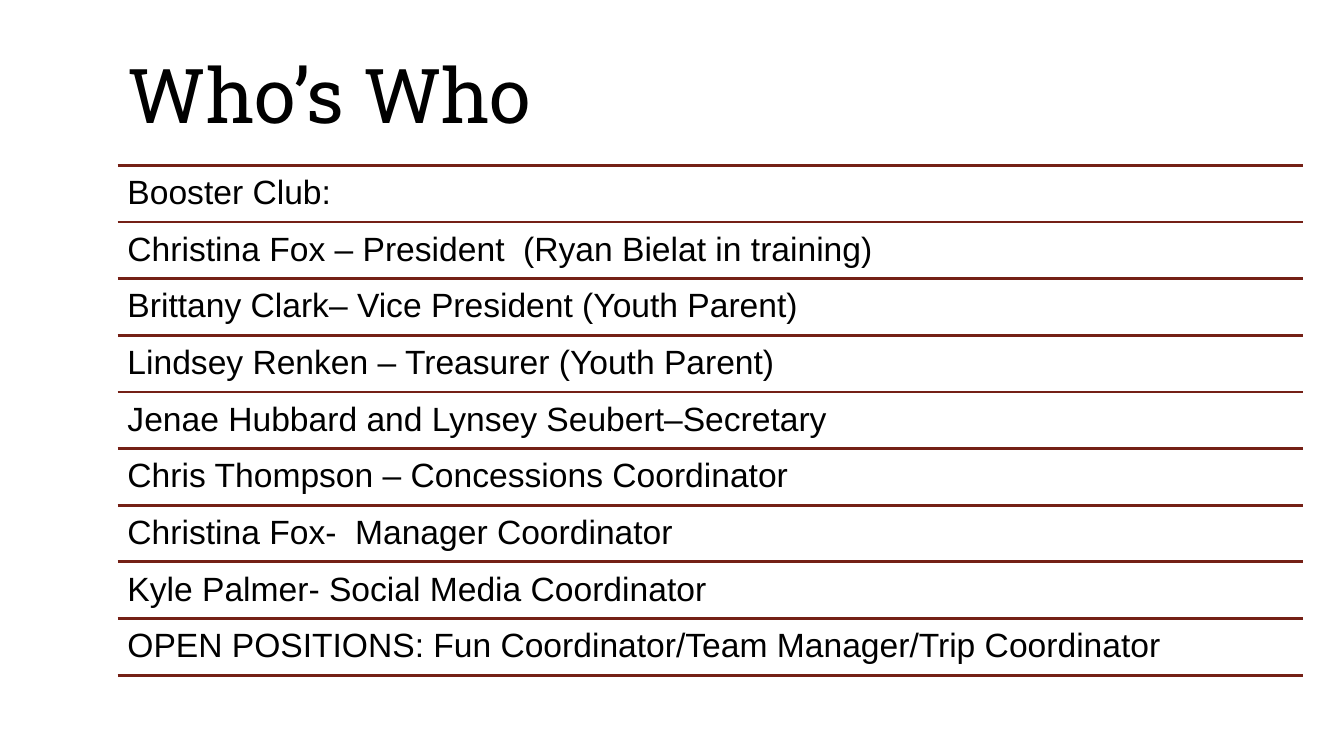
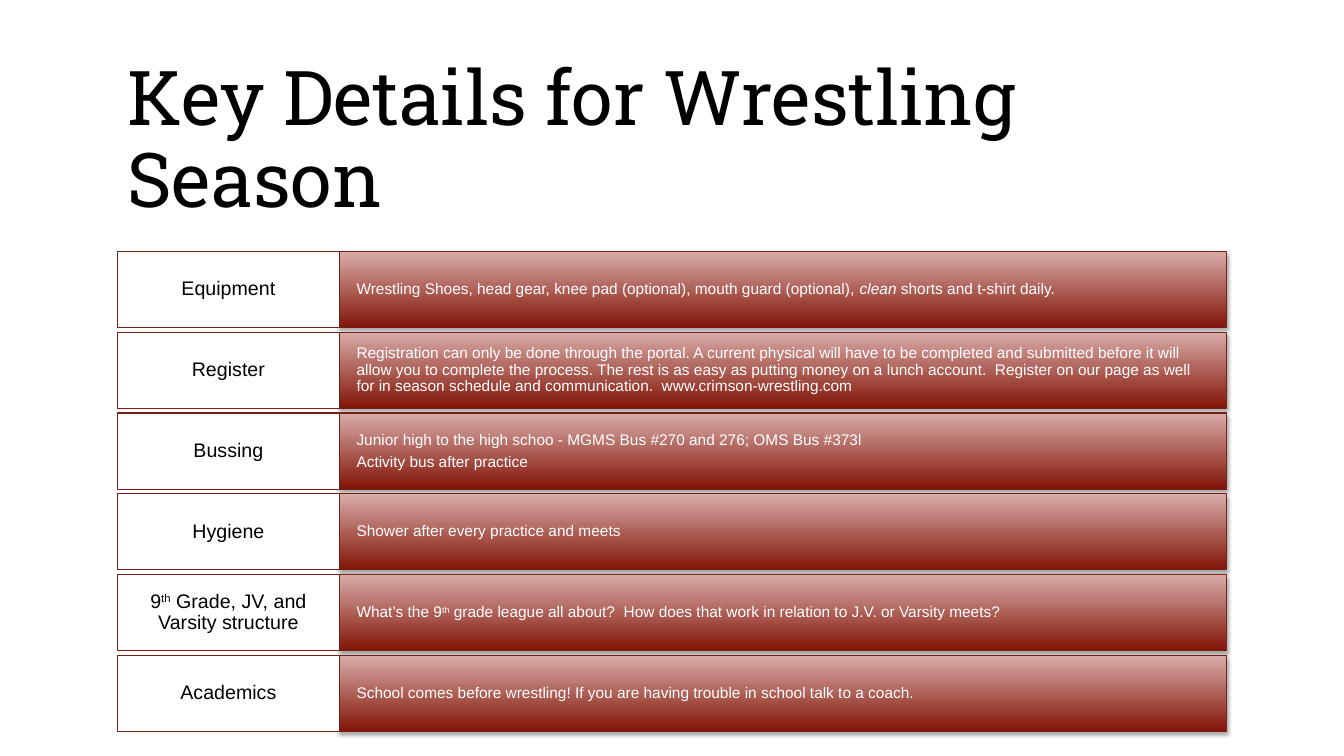
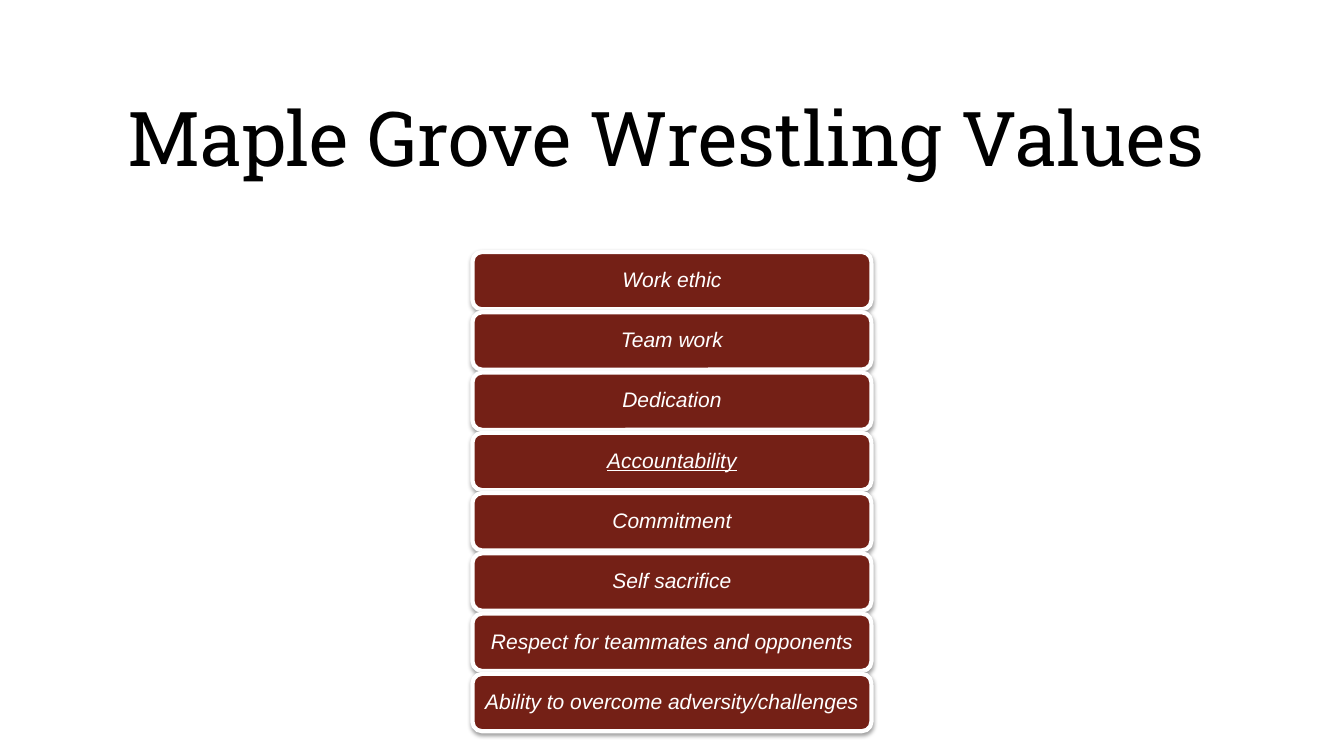
import pptx
import pptx.util
import pptx.dml.color
import pptx.enum.shapes
import pptx.enum.text
import pptx.oxml
import pptx.oxml.ns
from lxml import etree

Pt = pptx.util.Pt
RGB = pptx.dml.color.RGBColor
SHAPE = pptx.enum.shapes.MSO_SHAPE
ANCHOR = pptx.enum.text.MSO_ANCHOR
ALIGN = pptx.enum.text.PP_ALIGN
qn = pptx.oxml.ns.qn

# Content: a text is a list of paragraphs, a paragraph a list of (words, style)
PEOPLE = [
    "Booster Club:",
    "Christina Fox – President  (Ryan Bielat in training)",
    "Brittany Clark– Vice President (Youth Parent)",
    "Lindsey Renken – Treasurer (Youth Parent)",
    "Jenae Hubbard and Lynsey Seubert–Secretary",
    "Chris Thompson – Concessions Coordinator",
    "Christina Fox-  Manager Coordinator",
    "Kyle Palmer- Social Media Coordinator",
    "OPEN POSITIONS: Fun Coordinator/Team Manager/Trip Coordinator",
]
DETAILS = [
    ([[("Equipment", "")]],
     [[("Wrestling Shoes, head gear, knee pad (optional), mouth guard (optional), ", ""),
       ("clean", "italic"), (" shorts and t-shirt daily.", "")]]),
    ([[("Register", "")]],
     [[("Registration can only be done through the portal. A current physical will have "
        "to be completed and submitted before it will allow you to complete the process. "
        "The rest is as easy as putting money on a lunch account.  Register on our page "
        "as well for in season schedule and communication.  www.crimson-wrestling.com", "")]]),
    ([[("Bussing", "")]],
     [[("Junior high to the high schoo - MGMS Bus #270 and 276; OMS Bus #373l", "")],
      [("Activity bus after practice", "")]]),
    ([[("Hygiene", "")]],
     [[("Shower after every practice and meets", "")]]),
    ([[("9", ""), ("th", "super"), (" Grade, JV, and Varsity structure", "")]],
     [[("What’s the 9", ""), ("th", "super"),
       (" grade league all about?  How does that work in relation to J.V. or Varsity meets?", "")]]),
    ([[("Academics", "")]],
     [[("School comes before wrestling! If you are having trouble in school talk to a coach.", "")]]),
]
VALUES = [
    ("Work ethic", "italic"),
    ("Team work", "italic"),
    ("Dedication", "italic"),
    ("Accountability", "italic under"),
    ("Commitment", "italic"),
    ("Self sacrifice", "italic"),
    ("Respect for teammates and opponents", "italic"),
    ("Ability to overcome adversity/challenges", "italic"),
]

# Shared look
BLACK = RGB(0x00, 0x00, 0x00)
WHITE = RGB(0xFF, 0xFF, 0xFF)
MAROON = RGB(0x74, 0x20, 0x16)
DARK = RGB(0x82, 0x14, 0x07)
LIGHT = RGB(0xD9, 0xAC, 0xA8)
HEAD, BODY = "Roboto Slab", "Arial"
LEFT = 84

deck = pptx.Presentation()
deck.slide_width, deck.slide_height = Pt(960), Pt(540)


def write(shape, text, size, color, font=BODY, inset=(7.2, 7.2),
          align=ALIGN.LEFT, anchor=ANCHOR.MIDDLE):
    frame = shape.text_frame
    frame.word_wrap = True
    frame.vertical_anchor = anchor
    frame.margin_left = frame.margin_right = Pt(inset[0])
    frame.margin_top = frame.margin_bottom = Pt(inset[1])
    for i, line in enumerate(text):
        para = frame.add_paragraph() if i else frame.paragraphs[0]
        para.alignment = align
        para.line_spacing = 0.9
        if i:
            para.space_before = Pt(3.9)
        for words, style in line:
            run = para.add_run()
            run.text = words
            run.font.name, run.font.size = font, Pt(size)
            run.font.color.rgb = color
            if "italic" in style:
                run.font.italic = True
            if "under" in style:
                run.font.underline = True
            if "super" in style:
                run.font._element.set("baseline", "30000")


def add_text(slide, box, text, size, color, **look):
    write(slide.shapes.add_textbox(*map(Pt, box)), text, size, color, **look)


def add_slide(title, height=127):
    slide = deck.slides.add_slide(deck.slide_layouts[6])
    add_text(slide, (LEFT, 38, 792, height), [[(title, "")]], 54, BLACK,
             font=HEAD, inset=(7.2, 3.6))
    return slide


def add_box(slide, kind, box, fill, edge, width, shade=None):
    """Fill is one colour or a (bottom, top) pair; shade is (alpha %, drop)."""
    shape = slide.shapes.add_shape(kind, *map(Pt, box))
    shape.shadow.inherit = False
    if isinstance(fill, list):
        shape.fill.gradient()
        shape.fill.gradient_angle = 90
        for stop, color in zip(shape.fill.gradient_stops, fill):
            stop.color.rgb = color
    else:
        shape.fill.solid()
        shape.fill.fore_color.rgb = fill
    shape.line.color.rgb = edge
    shape.line.width = Pt(width)
    if shade:
        alpha, drop = shade
        list_ = shape._element.spPr.find(qn("a:effectLst"))
        outer = etree.SubElement(list_, qn("a:outerShdw"), blurRad=str(Pt(3.1)),
                                 dist=str(Pt(drop)), dir="5400000", rotWithShape="0")
        color = etree.SubElement(outer, qn("a:srgbClr"), val="000000")
        etree.SubElement(color, qn("a:alpha"), val=str(alpha * 1000))
    return shape


def add_rule(slide, y, width):
    rule = slide.shapes.add_connector(pptx.enum.shapes.MSO_CONNECTOR.STRAIGHT,
                                      Pt(LEFT), Pt(y), Pt(LEFT + width), Pt(y))
    rule.line.color.rgb = MAROON
    rule.line.width = Pt(2)
    etree.SubElement(rule._element.spPr, qn("a:effectLst"))


def who_slide():
    slide = add_slide("Who’s Who", height=65)
    top, step, width = 118.2, 40.45, 847
    for i, name in enumerate(PEOPLE):
        y = top + i * step
        add_rule(slide, y, width)
        add_text(slide, (LEFT, y, width, step), [[(name, "")]], 24, BLACK,
                 anchor=ANCHOR.TOP)
    add_rule(slide, top + len(PEOPLE) * step, width)


def detail_slide():
    slide = add_slide("Key Details for Wrestling Season")
    top, step, tall, label, wide = 179.6, 57.7, 54.4, 158.4, 633.6
    for i, (topic, note) in enumerate(DETAILS):
        y = top + i * step
        band = add_box(slide, SHAPE.RECTANGLE, (LEFT + label, y, wide, tall),
                       [DARK, LIGHT], MAROON, 0.75, shade=(35, 1.8))
        write(band, note, 11, WHITE, inset=(12.3, 13.8))
        cell = add_box(slide, SHAPE.RECTANGLE, (LEFT, y, label, tall),
                       WHITE, MAROON, 0.75)
        write(cell, topic, 14, BLACK, inset=(8.4, 5.4), align=ALIGN.CENTER)


def value_slide():
    slide = add_slide("Maple Grove Wrestling Values")
    top, step, tall, wide = 180, 43.05, 41, 285
    for i, value in enumerate(VALUES):
        box = ((960 - wide) / 2, top + i * step, wide, tall)
        pill = add_box(slide, SHAPE.ROUNDED_RECTANGLE, box, MAROON, WHITE, 3,
                       shade=(38, 1.6))
        write(pill, [[value]], 15, WHITE, inset=(4.5, 2.2), align=ALIGN.CENTER)


who_slide()
detail_slide()
value_slide()
deck.save("out.pptx")
